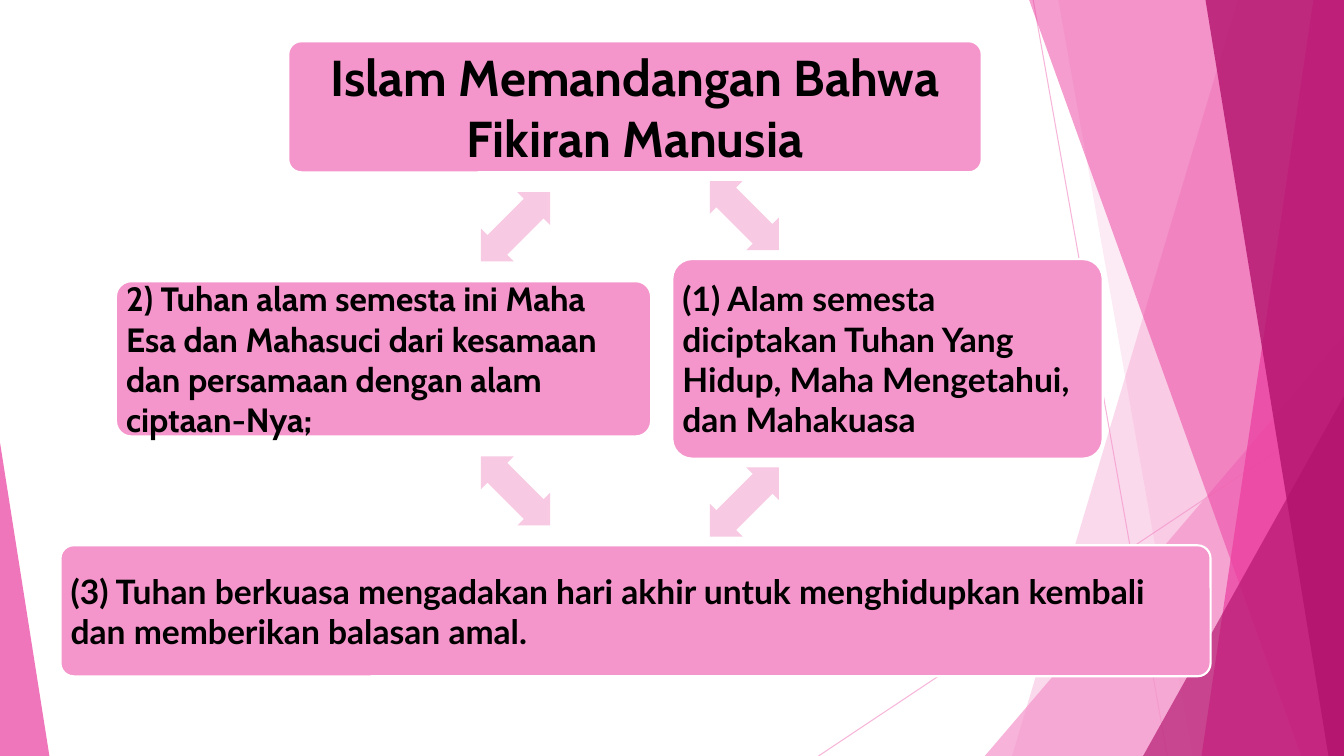
from dataclasses import dataclass

from lxml import etree
from pptx import Presentation, util as u
from pptx.dml.color import RGBColor
from pptx.enum import shapes as sh, text as tx
from pptx.oxml import ns

Pt = u.Pt
WIDE, HIGH = 960, 540


@dataclass(frozen=True)
class Theme:
    pink: str = "F496CB"
    rose: str = "EB3D9F"
    wine: str = "B2136D"
    pale: str = "F8C9E2"
    edge: str = "FFFFFF"
    ink: str = "000000"
    head: int = 36
    body: int = 24
    rim: float = 1.5
    hair: float = 0.75


@dataclass(frozen=True)
class Ray:
    start: tuple[float, float]
    end: tuple[float, float]


@dataclass(frozen=True)
class Band:
    """Area from a slanted left edge to the right side of the slide."""
    top: float
    foot: float
    tint: str
    alpha: int


@dataclass(frozen=True)
class Wedge:
    """Right triangle standing on the slide's bottom edge."""
    left: float
    top: float
    width: float
    tip: int
    tint: str
    alpha: int


@dataclass(frozen=True)
class Card:
    left: float
    top: float
    width: float
    height: float
    words: str
    font: str
    size: int
    pad: float = 7.2
    align: tx.PP_ALIGN = tx.PP_ALIGN.LEFT

    @property
    def foot(self) -> float:
        return self.top + self.height


@dataclass(frozen=True)
class Arrow:
    """Double arrow halfway between two cards."""
    mid: float
    above: Card
    below: Card
    turn: int


T = Theme()

RAYS = [Ray((738, 0), (833.76, HIGH)), Ray((WIDE, 290.16), (584.64, HIGH))]

DECOR = [
    Band(884.16, 722.88, T.pink, 36),
    Band(756, 851.76, T.pink, 20),
    Wedge(703.44, 239.76, 256.56, 1, T.pink, 72),
    Band(735.12, 929.52, T.rose, 50),
    Band(938.16, 858.24, T.rose, 70),
    Band(861.12, 948.96, T.wine, 80),
    Wedge(816.48, 282.96, 143.52, 1, T.wine, 66),
    Wedge(0, 316.08, 35.28, 0, T.rose, 70),
]

TITLE = Card(205.92, 29.52, 495.36, 93.6, "Islam Memandangan Bahwa Fikiran Manusia",
             "Cabin", T.head, 10.8, tx.PP_ALIGN.CENTER)
RIGHT = Card(480.24, 185.04, 307.44, 142.56,
             "(1) Alam semesta diciptakan Tuhan Yang Hidup, Maha Mengetahui, dan Mahakuasa",
             "Lato", T.body)
BASE = Card(43.2, 389.52, 821.52, 93.6,
            "(3) Tuhan berkuasa mengadakan hari akhir untuk menghidupkan kembali "
            "dan memberikan balasan amal.", "Lato", T.body)
LEFT = Card(82.8, 200.88, 382.32, 110.88,
            "2) Tuhan alam semesta ini Maha Esa dan Mahasuci dari kesamaan "
            "dan persamaan dengan alam ciptaan-Nya;", "Cabin", T.body)

AXIS, REACH = 450, 81.72
ARROWS = [
    Arrow(AXIS + REACH, TITLE, RIGHT, 45),
    Arrow(AXIS + REACH, RIGHT, BASE, 135),
    Arrow(AXIS - REACH, LEFT, BASE, 225),
    Arrow(AXIS - REACH, TITLE, LEFT, 315),
]
ARROW_W, ARROW_H = 69.84, 33.12
ROUND = 0.1
INSET = 0.29 * ROUND  # share of its height by which a rounded card insets its text


def fade(item, alpha: int) -> None:
    """Set the opacity, in percent, of the item's colour."""
    tint = item._element.spPr.find(".//" + ns.qn("a:srgbClr"))
    etree.SubElement(tint, ns.qn("a:alpha")).set("val", str(alpha * 1000))


def paint(shape, tint: str) -> None:
    shape.shadow.inherit = False
    shape.fill.solid()
    shape.fill.fore_color.rgb = RGBColor.from_string(tint)
    shape.line.fill.background()


def draw_ray(slide, ray: Ray) -> None:
    line = slide.shapes.add_connector(sh.MSO_CONNECTOR.STRAIGHT,
                                      *map(Pt, ray.start + ray.end))
    line.line.color.rgb = RGBColor.from_string(T.pink)
    line.line.width = Pt(T.hair)
    fade(line, 70)
    etree.SubElement(line._element.spPr, ns.qn("a:effectLst"))


def draw_band(slide, band: Band) -> None:
    pen = slide.shapes.build_freeform(Pt(band.top), 0)
    pen.add_line_segments([(Pt(WIDE), 0), (Pt(WIDE), Pt(HIGH)),
                           (Pt(band.foot), Pt(HIGH))], close=True)
    shape = pen.convert_to_shape()
    paint(shape, band.tint)
    fade(shape, band.alpha)


def draw_wedge(slide, wedge: Wedge) -> None:
    shape = slide.shapes.add_shape(
        sh.MSO_SHAPE.ISOSCELES_TRIANGLE, Pt(wedge.left), Pt(wedge.top),
        Pt(wedge.width), Pt(HIGH - wedge.top))
    shape.adjustments[0] = wedge.tip
    paint(shape, wedge.tint)
    fade(shape, wedge.alpha)


def draw_card(slide, card: Card) -> None:
    shape = slide.shapes.add_shape(
        sh.MSO_SHAPE.ROUNDED_RECTANGLE, Pt(card.left), Pt(card.top),
        Pt(card.width), Pt(card.height))
    shape.adjustments[0] = ROUND
    paint(shape, T.pink)
    shape.line.color.rgb = RGBColor.from_string(T.edge)
    shape.line.width = Pt(T.rim)
    frame = shape.text_frame
    frame.word_wrap = True
    frame.vertical_anchor = tx.MSO_ANCHOR.MIDDLE
    pad = Pt(card.pad - INSET * card.height)
    frame.margin_left = frame.margin_right = pad
    frame.margin_top = frame.margin_bottom = pad
    frame.text = card.words
    para = frame.paragraphs[0]
    para.alignment = card.align
    font = para.runs[0].font
    font.name, font.size, font.bold = card.font, Pt(card.size), True
    font.color.rgb = RGBColor.from_string(T.ink)


def draw_arrow(slide, arrow: Arrow) -> None:
    level = (arrow.above.foot + arrow.below.top) / 2
    shape = slide.shapes.add_shape(
        sh.MSO_SHAPE.LEFT_RIGHT_ARROW, Pt(arrow.mid - ARROW_W / 2),
        Pt(level - ARROW_H / 2), Pt(ARROW_W), Pt(ARROW_H))
    shape.adjustments[0], shape.adjustments[1] = 0.6, 0.5
    shape.rotation = arrow.turn
    paint(shape, T.pale)


def main() -> None:
    deck = Presentation()
    deck.slide_width, deck.slide_height = Pt(WIDE), Pt(HIGH)
    slide = deck.slides.add_slide(deck.slide_layouts[6])

    # Background facets
    for ray in RAYS:
        draw_ray(slide, ray)
    for part in DECOR:
        draw = draw_band if isinstance(part, Band) else draw_wedge
        draw(slide, part)

    # Cycle of cards and arrows
    for card in (TITLE, RIGHT, BASE, LEFT):
        draw_card(slide, card)
    for arrow in ARROWS:
        draw_arrow(slide, arrow)

    deck.save("out.pptx")


if __name__ == "__main__":
    main()
